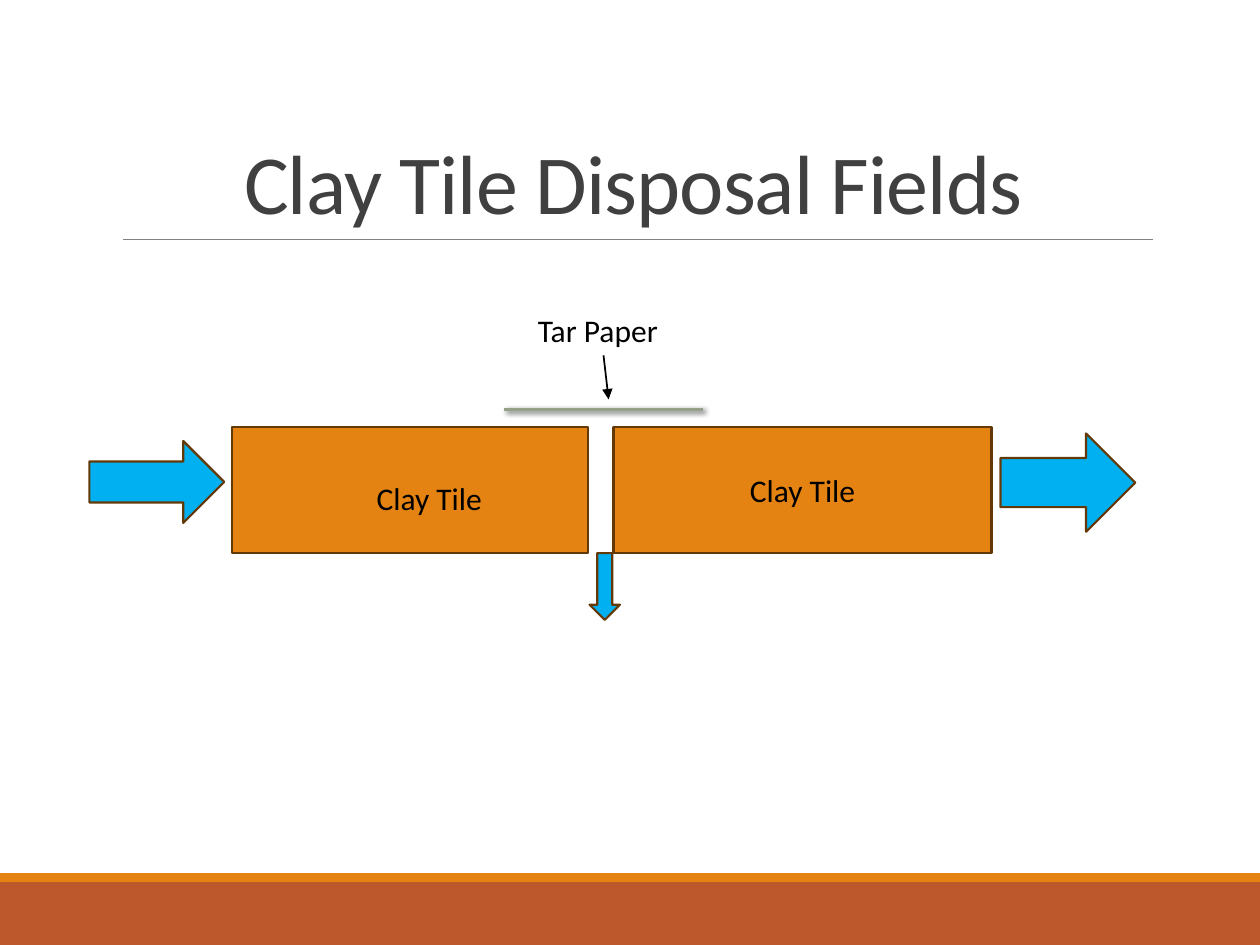
"""Build the slide on clay tile disposal fields."""
from lxml import etree
from pptx import Presentation
from pptx.dml.color import RGBColor
from pptx.enum import shapes, text
from pptx.oxml import ns
from pptx.util import Inches, Pt

ORANGE = RGBColor(0xE4, 0x83, 0x12)
RUST = RGBColor(0xBD, 0x58, 0x2C)
BROWN = RGBColor(0x64, 0x39, 0x08)
BLUE = RGBColor(0x00, 0xB0, 0xF0)
SAGE = RGBColor(0x94, 0xA0, 0x88)
GRAY = RGBColor(0x80, 0x80, 0x80)
CHARCOAL = RGBColor(0x40, 0x40, 0x40)
BLACK = RGBColor(0x00, 0x00, 0x00)

RECTANGLE = shapes.MSO_SHAPE.RECTANGLE
RIGHT_ARROW = shapes.MSO_SHAPE.RIGHT_ARROW
DOWN_ARROW = shapes.MSO_SHAPE.DOWN_ARROW
LEFT, CENTER = text.PP_ALIGN.LEFT, text.PP_ALIGN.CENTER
TOP, MIDDLE, BOTTOM = text.MSO_ANCHOR.TOP, text.MSO_ANCHOR.MIDDLE, text.MSO_ANCHOR.BOTTOM


def write(shape, words, size, color, align, anchor, wrap=True):
    frame = shape.text_frame
    frame.word_wrap = wrap
    frame.vertical_anchor = anchor
    paragraph = frame.paragraphs[0]
    paragraph.alignment = align
    run = paragraph.add_run()
    run.text = words
    run.font.name = "Calibri"
    run.font.size = Pt(size)
    run.font.color.rgb = color
    return paragraph, run


presentation = Presentation()
presentation.slide_width = Inches(10)
presentation.slide_height = Inches(7.5)
slide = presentation.slides.add_slide(presentation.slide_layouts[6])

blocks = []
for kind, left, top, width, height, fill, outline in [
    (RECTANGLE, 0, 7, 10, 0.5, RUST, None),
    (RECTANGLE, 0, 6.93, 10, 0.07, ORANGE, None),
    (RECTANGLE, 1.84, 3.39, 2.83, 1, ORANGE, BROWN),
    (RECTANGLE, 4.87, 3.39, 3, 1, ORANGE, BROWN),
    (RIGHT_ARROW, 0.71, 3.5, 1.07, 0.65, BLUE, BROWN),
    (RIGHT_ARROW, 7.94, 3.44, 1.07, 0.78, BLUE, BROWN),
    (DOWN_ARROW, 4.68, 4.39, 0.24, 0.53, BLUE, BROWN),
]:
    shape = slide.shapes.add_shape(kind, Inches(left), Inches(top), Inches(width), Inches(height))
    shape.shadow.inherit = False
    shape.fill.solid()
    shape.fill.fore_color.rgb = fill
    if outline:
        shape.line.color.rgb = outline
        shape.line.width = Pt(1.25)
    else:
        shape.line.fill.background()
    blocks.append(shape)
right_tile = blocks[3]
write(right_tile, "Clay Tile", 18, BLACK, CENTER, MIDDLE)

lines = []
for x1, y1, x2, y2, color, weight in [
    (0.98, 1.9, 9.15, 1.9, GRAY, 0.5),
    (4, 3.25, 5.58, 3.25, SAGE, 2),
    (4.79, 2.82, 4.83, 3.17, BLACK, 1),
]:
    line = slide.shapes.add_connector(
        shapes.MSO_CONNECTOR.STRAIGHT, Inches(x1), Inches(y1), Inches(x2), Inches(y2))
    line.line.color.rgb = color
    line.line.width = Pt(weight)
    etree.SubElement(line._element.spPr, ns.qn("a:effectLst"))
    lines.append(line)
title_rule, tar_paper, pointer = lines

etree.SubElement(pointer.line._get_or_add_ln(), ns.qn("a:tailEnd"), type="triangle")

effects = tar_paper._element.spPr.find(ns.qn("a:effectLst"))
shadow = etree.SubElement(
    effects, ns.qn("a:outerShdw"), blurRad=str(Pt(3)), dist=str(Pt(2)),
    dir="2700000", algn="tl", rotWithShape="0")
shadow_color = etree.SubElement(shadow, ns.qn("a:srgbClr"), val="000000")
etree.SubElement(shadow_color, ns.qn("a:alpha"), val="60000")

labels = []
for words, left, top, width, height, size, color, align, anchor, wrap in [
    ("Clay Tile Disposal Fields", 0.9, 0.3, 8.25, 1.59, 48, CHARCOAL, CENTER, BOTTOM, True),
    ("Tar Paper", 4.17, 2.42, 1.25, 0.4, 18, BLACK, LEFT, TOP, True),
    ("Clay Tile", 2.89, 3.75, 1.05, 0.4, 18, BLACK, LEFT, TOP, False),
]:
    box = slide.shapes.add_textbox(Inches(left), Inches(top), Inches(width), Inches(height))
    labels.append(write(box, words, size, color, align, anchor, wrap))

title_paragraph, title_run = labels[0]
title_paragraph.line_spacing = 0.85
title_run.font._element.set("spc", "-50")

presentation.save("out.pptx")
